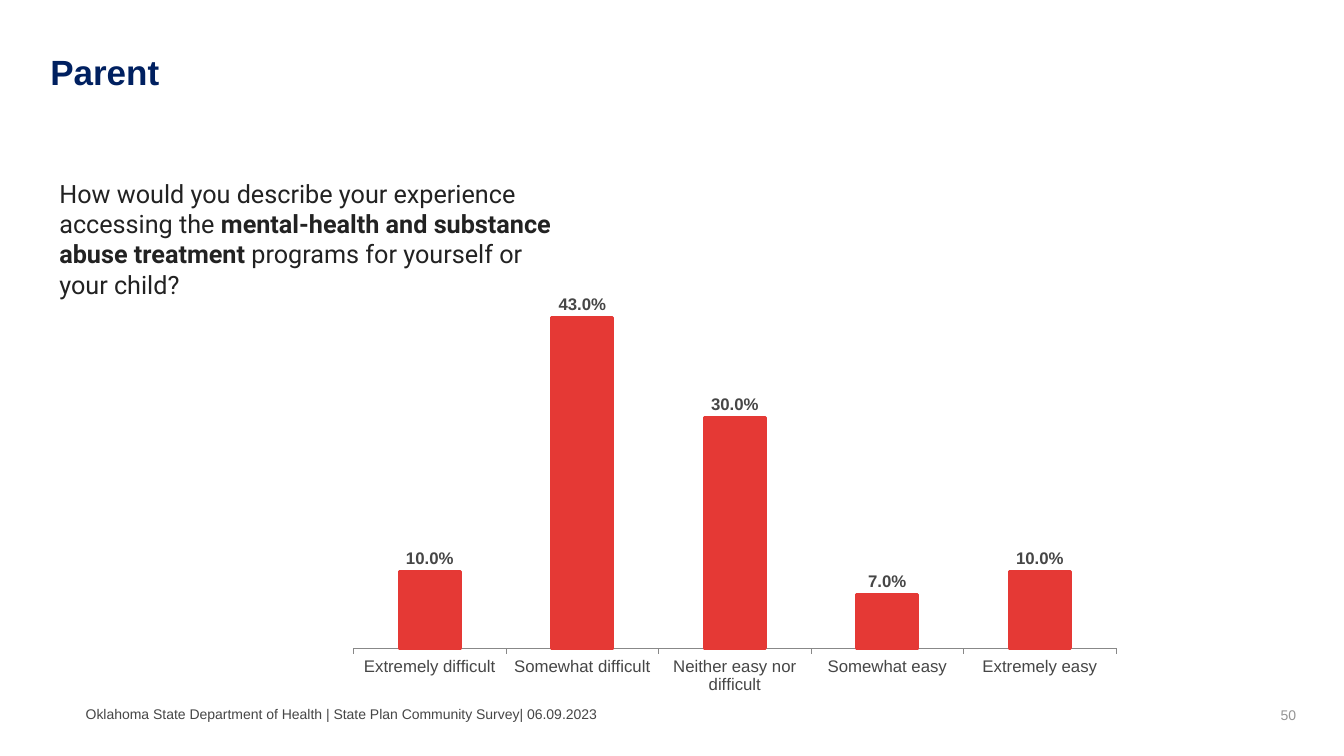
from pptx import Presentation
from pptx.chart.data import CategoryChartData
from pptx.dml.color import RGBColor
from pptx.enum.chart import XL_CHART_TYPE, XL_LABEL_POSITION, XL_TICK_MARK
from pptx.enum.text import MSO_ANCHOR, PP_ALIGN
from pptx.util import Pt

NAVY, INK, GREY, PALE, RED = "002060", "222222", "464646", "949494", "E53935"


def color(value):
    return RGBColor.from_string(value)


class SurveySlide:
    font = "Arial"

    def __init__(self, slide):
        self.slide = slide

    def style(self, font, size, ink, bold=False, name=None):
        font.name = name or self.font
        font.size = Pt(size)
        font.bold = bold
        font.color.rgb = color(ink)

    def text(self, box, runs, size, ink, name=None, left_inset=0,
             anchor=MSO_ANCHOR.TOP, align=PP_ALIGN.LEFT):
        """Add a text box from (wording, bold) pairs."""
        frame = self.slide.shapes.add_textbox(*map(Pt, box)).text_frame
        frame.word_wrap = True
        frame.margin_left = Pt(left_inset)
        frame.vertical_anchor = anchor
        paragraph = frame.paragraphs[0]
        paragraph.alignment = align
        for wording, bold in runs:
            run = paragraph.add_run()
            run.text = wording
            self.style(run.font, size, ink, bold, name)

    def column_chart(self, box, answers):
        data = CategoryChartData(number_format="0.0%")
        data.categories = list(answers)
        data.add_series("Series 1", list(answers.values()))
        chart = self.slide.shapes.add_chart(
            XL_CHART_TYPE.COLUMN_CLUSTERED, *map(Pt, box), data).chart
        chart.has_legend = False
        chart.has_title = False
        self.style(chart.font, 18, GREY)

        shares = chart.value_axis
        shares.minimum_scale, shares.maximum_scale = 0, 0.5
        shares.has_major_gridlines = False
        shares.visible = False

        choices = chart.category_axis
        choices.major_tick_mark = XL_TICK_MARK.OUTSIDE
        choices.format.line.color.rgb = color("888888")
        choices.format.line.width = Pt(0.75)
        self.style(choices.tick_labels.font, 12, GREY)

        plot = chart.plots[0]
        plot.gap_width = 150
        plot.vary_by_categories = False
        columns = plot.series[0]
        columns.format.fill.solid()
        columns.format.fill.fore_color.rgb = color(RED)
        columns.format.line.color.rgb = color(RED)
        columns.format.line.width = Pt(2.25)

        labels = columns.data_labels
        labels.show_value = True
        labels.position = XL_LABEL_POSITION.OUTSIDE_END
        labels.number_format = "0.0%"
        labels.number_format_is_linked = False
        self.style(labels.font, 12, GREY, bold=True)


def main():
    deck = Presentation()
    deck.slide_width, deck.slide_height = Pt(960), Pt(540)
    page = SurveySlide(deck.slides.add_slide(deck.slide_layouts[6]))

    page.text((36, 32.4, 897, 66), [("Parent", True)], 25, NAVY)
    page.text((717, 502.5, 216, 16), [("50", False)], 10, PALE,
              anchor=MSO_ANCHOR.MIDDLE, align=PP_ALIGN.RIGHT)
    page.text((61.2, 502, 641, 16),
              [("Oklahoma State Department of Health | State Plan Community "
                "Survey| 06.09.2023", False)],
              10, GREY, anchor=MSO_ANCHOR.MIDDLE)
    page.text((35.3, 123.8, 383, 116.6),
              [("How would you describe your experience accessing the ", False),
               ("mental-health and substance abuse treatment", True),
               (" programs for yourself or your child?", False)],
              18, INK, name="Roboto", left_inset=7.2)
    page.column_chart((241.2, 182.2, 567.4, 319.7), {
        "Extremely difficult": 0.10,
        "Somewhat difficult": 0.43,
        "Neither easy nor difficult": 0.30,
        "Somewhat easy": 0.07,
        "Extremely easy": 0.10,
    })
    deck.save("out.pptx")


if __name__ == "__main__":
    main()
